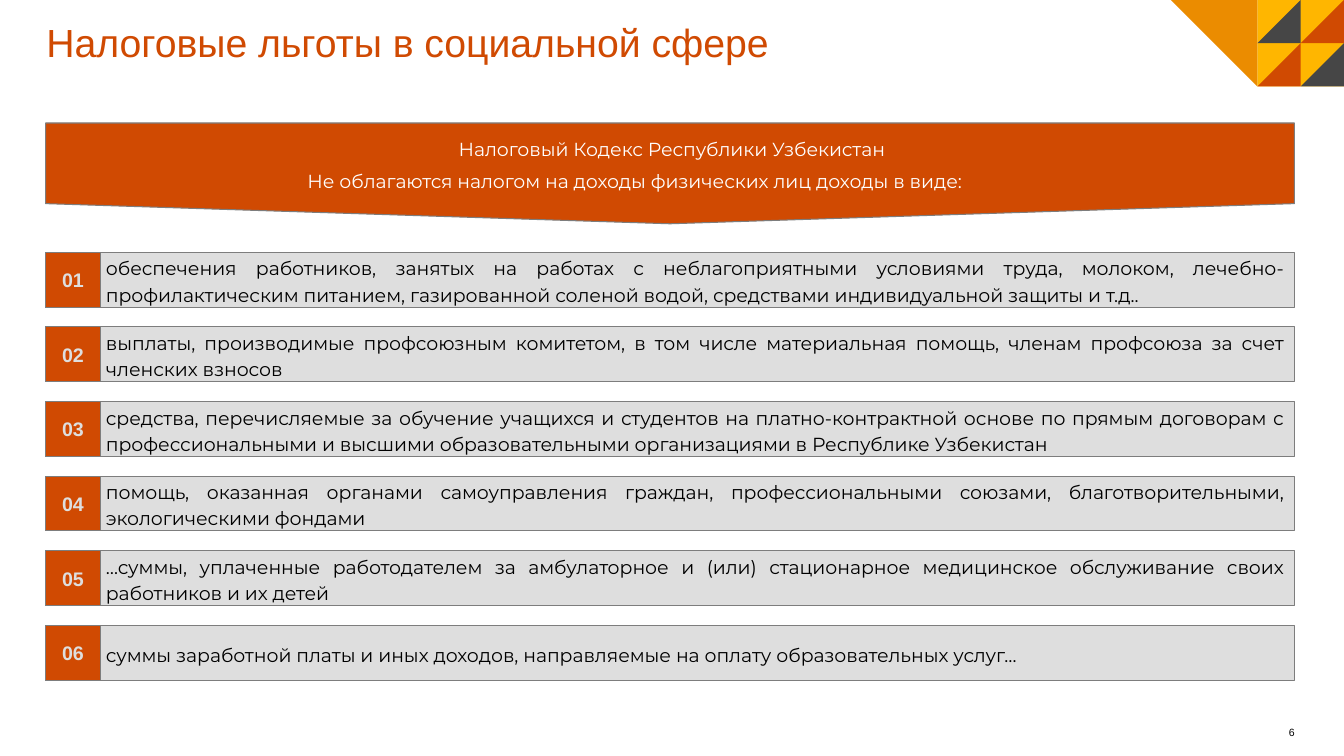
from pptx import Presentation
from pptx.dml.color import RGBColor
from pptx.enum.shapes import MSO_SHAPE
from pptx.enum.text import MSO_ANCHOR, MSO_AUTO_SIZE, PP_ALIGN
from pptx.util import Cm, Pt

RUST, GOLD, AMBER, DARK = "D04A02", "FFB600", "EB8C00", "464646"
PALE, GREY, BLACK, WHITE = "DEDEDE", "7D7D7D", "000000", "FFFFFF"


def paint(shape, fill, line=None):
    shape.shadow.inherit = False
    shape.fill.solid()
    shape.fill.fore_color.rgb = RGBColor.from_string(fill)
    if line:
        shape.line.color.rgb = RGBColor.from_string(line)
        shape.line.width = Pt(0.75)
    else:
        shape.line.fill.background()


def write(para, text, size, color, font, align, margin=0, indent=0):
    """Add one run; margin and indent are in cm."""
    para.alignment = align
    props = para._p.get_or_add_pPr()
    props.set("marL", str(Cm(margin)))
    props.set("indent", str(Cm(indent)))
    run = para.add_run()
    run.text = text
    run.font.size = Pt(size)
    run.font.name = font
    run.font.color.rgb = RGBColor.from_string(color)
    return run


deck = Presentation()
deck.slide_width, deck.slide_height = Cm(33.87), Cm(19.05)
slide = deck.slides.add_slide(deck.slide_layouts[5])
shapes = slide.shapes

# Title
title = shapes.title
title.left, title.top, title.width, title.height = Cm(1.17), Cm(0.64), Cm(26.59), Cm(1.02)
frame = title.text_frame
frame.margin_left = frame.margin_right = frame.margin_top = frame.margin_bottom = 0
frame.auto_size = MSO_AUTO_SIZE.SHAPE_TO_FIT_TEXT
frame.vertical_anchor = MSO_ANCHOR.TOP
frame.paragraphs[0].line_spacing = 0.85
write(frame.paragraphs[0], "Налоговые льготы в социальной сфере", 28, RUST, "Arial", PP_ALIGN.LEFT)

# Corner mosaic: one square with triangles, on a grid of tiles
tile = Cm(1.09)
edge = deck.slide_width - 2 * tile
paint(shapes.add_shape(MSO_SHAPE.RECTANGLE, edge, 0, 2 * tile, 2 * tile), GOLD)
mosaic = [(AMBER, [(-2, 0), (0, 2), (0, 0)])]
for col, row, color in [(1, 0, RUST), (1, 1, DARK), (0, 0, DARK), (0, 1, RUST)]:
    mosaic.append((color, [(col, row + 1), (col + 1, row + 1), (col + 1, row)]))
for color, points in mosaic:
    spots = [(edge + x * tile, y * tile) for x, y in points]
    pen = shapes.build_freeform(*spots[0])
    pen.add_line_segments(spots[1:], close=True)
    paint(pen.convert_to_shape(), color)

# Banner
left, width = 1.15, 31.47
banner = shapes.add_shape(MSO_SHAPE.FLOWCHART_OFFPAGE_CONNECTOR, Cm(left), Cm(3.1), Cm(width), Cm(2.54))
paint(banner, RUST, GREY)
frame = banner.text_frame
frame.margin_left = frame.margin_right = frame.margin_top = frame.margin_bottom = Cm(0.25)
frame.vertical_anchor = MSO_ANCHOR.MIDDLE
lines = [
    ("Налоговый Кодекс Республики Узбекистан", 8.89, 0),
    ("Не облагаются налогом на доходы физических лиц доходы в виде:", 5.08, 4),
]
for i, (text, margin, after) in enumerate(lines):
    para = frame.add_paragraph() if i else frame.paragraphs[0]
    para.line_spacing = 1.15
    para.space_before, para.space_after = Pt(4), Pt(after)
    write(para, text, 13.5, WHITE, "Montserrat", PP_ALIGN.JUSTIFY, margin, 1.27)

# Numbered rows
perks = [
    "обеспечения работников, занятых на работах с неблагоприятными условиями труда, молоком, "
    "лечебно-профилактическим питанием, газированной соленой водой, средствами индивидуальной защиты и т.д..",
    "выплаты, производимые профсоюзным комитетом, в том числе материальная помощь, "
    "членам профсоюза за счет членских взносов",
    "средства, перечисляемые за обучение учащихся и студентов на платно-контрактной основе по прямым "
    "договорам с профессиональными и высшими образовательными организациями в Республике Узбекистан",
    "помощь, оказанная органами самоуправления граждан, профессиональными союзами, "
    "благотворительными, экологическими фондами",
    "…суммы, уплаченные работодателем за амбулаторное и (или) стационарное медицинское обслуживание "
    "своих работников и их детей",
    "суммы заработной платы и иных доходов, направляемые на оплату образовательных услуг…",
]
side = 1.38
for i, perk in enumerate(perks):
    top = Cm(6.36 + i * 1.88)
    bar = shapes.add_shape(MSO_SHAPE.RECTANGLE, Cm(left), top, Cm(width), Cm(side))
    badge = shapes.add_shape(MSO_SHAPE.RECTANGLE, Cm(left), top, Cm(side), Cm(side))
    for box, fill in [(bar, PALE), (badge, RUST)]:
        paint(box, fill, GREY)
        frame = box.text_frame
        frame.margin_left = frame.margin_right = frame.margin_top = frame.margin_bottom = Cm(0.25)
        frame.vertical_anchor = MSO_ANCHOR.MIDDLE
    para = bar.text_frame.paragraphs[0]
    para.line_spacing = 1.15
    para.space_before = para.space_after = Pt(4)
    write(para, perk, 13.5, BLACK, "Montserrat", PP_ALIGN.JUSTIFY, 1.27)
    para = badge.text_frame.paragraphs[0]
    write(para, f"{i + 1:02}", 14, PALE, "Arial", PP_ALIGN.CENTER).font.bold = True

# Page number
page = shapes.add_textbox(Cm(22.83), Cm(18.24), Cm(9.8), Cm(0.38))
frame = page.text_frame
frame.word_wrap = True
frame.margin_left = frame.margin_right = frame.margin_top = frame.margin_bottom = 0
frame.vertical_anchor = MSO_ANCHOR.BOTTOM
write(frame.paragraphs[0], "6", 7.5, BLACK, "Arial", PP_ALIGN.RIGHT)

deck.save("out.pptx")
